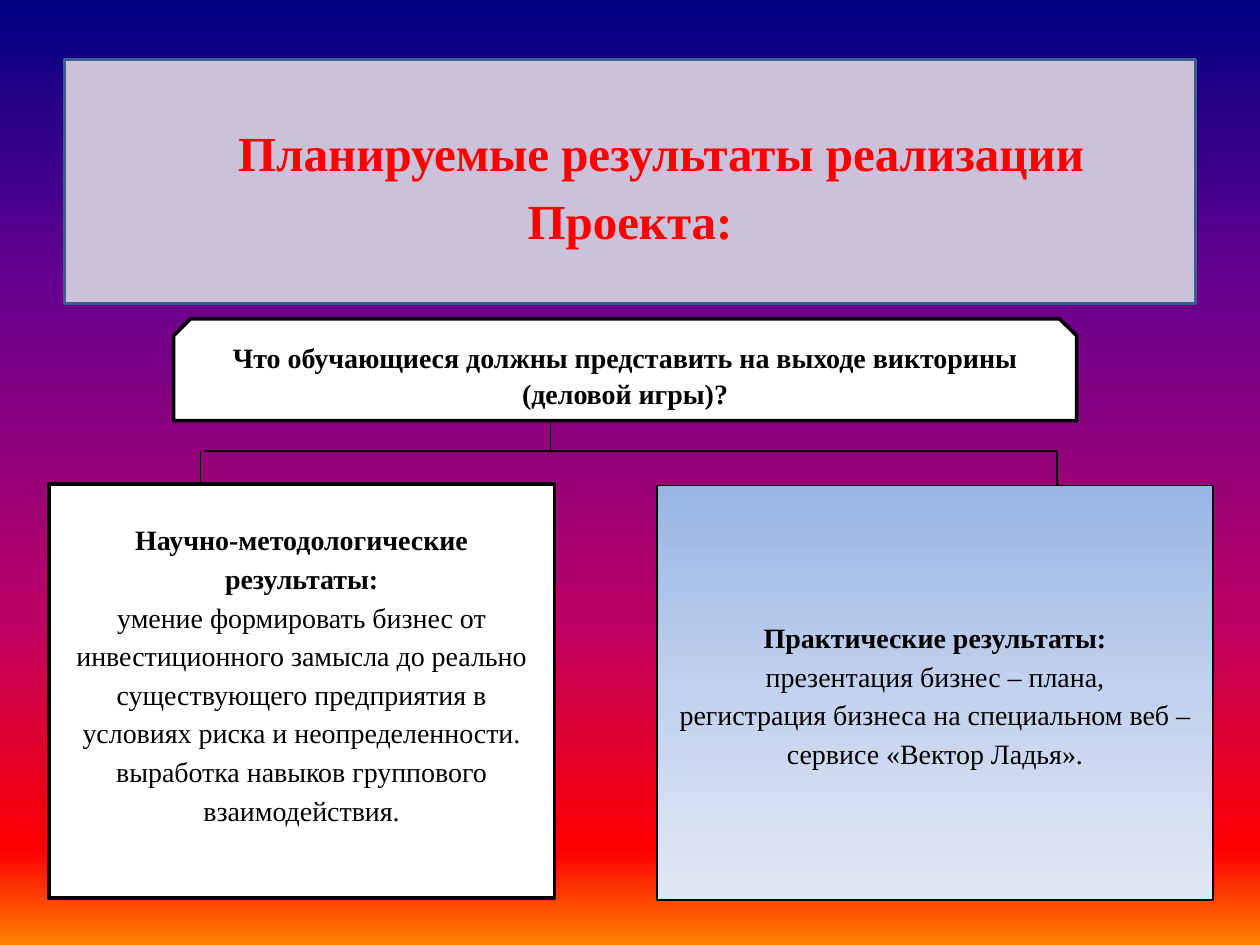
from pptx import Presentation
from pptx.util import Pt
from pptx.dml.color import RGBColor
from pptx.enum import shapes as sh, text as tx
from pptx.oxml import ns, xmlchemy as xc

HUES = {
    "black": "000000", "white": "FFFFFF", "red": "FF0000",
    "lilac": "CCC1DA", "steel": "3A5F8C",
}
SKY = [(0, "000082"), (30, "66008F"), (65, "BA0066"), (90, "FF0000"), (100, "FF8200")]
ICE = [(0, "9AB5E4"), (50, "C2D1ED"), (100, "E1E8F5")]
FONT = "Times New Roman"


def hue(name):
    return RGBColor.from_string(HUES[name])


def blend(fill, root, stops):
    fill.gradient()
    fill.gradient_angle = 270
    bands = next(root.iter(ns.qn("a:gsLst")))
    for old in list(bands):
        bands.remove(old)
    for place, tint in stops:
        stop = xc.OxmlElement("a:gs")
        stop.set("pos", str(place * 1000))
        shade = xc.OxmlElement("a:srgbClr")
        shade.set("val", tint)
        stop.append(shade)
        bands.append(stop)


def box(slide, kind, left, top, width, height, fill, line="black", weight=2):
    shape = slide.shapes.add_shape(kind, Pt(left), Pt(top), Pt(width), Pt(height))
    shape.shadow.inherit = False
    if isinstance(fill, list):
        blend(shape.fill, shape.element, fill)
    else:
        shape.fill.solid()
        shape.fill.fore_color.rgb = hue(fill)
    shape.line.color.rgb = hue(line)
    shape.line.width = Pt(weight)
    frame = shape.text_frame
    frame.word_wrap = True
    frame.vertical_anchor = tx.MSO_ANCHOR.MIDDLE
    return frame


def write(frame, words, first=False, size=16, color="black", bold=False,
          lead=1.15, after=0, indent=0):
    para = frame.paragraphs[0] if first else frame.add_paragraph()
    para.alignment = tx.PP_ALIGN.CENTER
    para.line_spacing = lead
    para.space_after = Pt(after)
    if indent:
        para._p.get_or_add_pPr().set("indent", str(Pt(indent)))
    run = para.add_run()
    run.text = words
    run.font.name = FONT
    run.font.size = Pt(size)
    run.font.bold = bold
    run.font.color.rgb = hue(color)


def link(slide, x1, y1, x2, y2, weight=0.75):
    wire = slide.shapes.add_connector(
        sh.MSO_CONNECTOR.STRAIGHT, Pt(x1), Pt(y1), Pt(x2), Pt(y2))
    wire.line.color.rgb = hue("black")
    wire.line.width = Pt(weight)
    wire.element.spPr.append(xc.OxmlElement("a:effectLst"))


def panel(frame, head, *lines):
    write(frame, head, first=True, bold=True)
    for words in lines:
        write(frame, words)


def main():
    deck = Presentation()
    deck.slide_width, deck.slide_height = Pt(720), Pt(540)
    slide = deck.slides.add_slide(deck.slide_layouts[6])
    blend(slide.background.fill, slide.element, SKY)
    rect = sh.MSO_SHAPE.RECTANGLE

    ask = box(slide, sh.MSO_SHAPE.SNIP_2_SAME_RECTANGLE, 99.2, 182.2, 516, 58.2, "white")
    write(ask, "Что обучающиеся должны представить на выходе викторины (деловой игры)?",
          first=True, bold=True, lead=1.07, after=8)

    link(slide, 314.6, 240.4, 314.6, 259)
    link(slide, 116.6, 257.8, 604, 257.8)
    link(slide, 114.3, 257.8, 114.3, 276.5, weight=0.5)
    link(slide, 604, 258.5, 604, 277.2)

    method = box(slide, rect, 28, 276.5, 288.8, 236.8, "white")
    method.margin_bottom = Pt(25)
    panel(method, "Научно-методологические результаты:",
          "умение формировать бизнес от инвестиционного замысла до реально "
          "существующего предприятия в условиях риска и неопределенности.",
          "выработка навыков группового взаимодействия.")

    skill = box(slide, rect, 375.6, 277.5, 317.5, 236.8, ICE, weight=1)
    panel(skill, "Практические результаты:",
          "презентация бизнес – плана,",
          "регистрация бизнеса на специальном веб – сервисе «Вектор Ладья».")

    title = box(slide, rect, 36.8, 34, 646.5, 139.5, "lilac", line="steel")
    write(title, "Планируемые результаты реализации Проекта:",
          first=True, size=28, color="red", bold=True, indent=35.4)

    deck.save("out.pptx")


if __name__ == "__main__":
    main()
